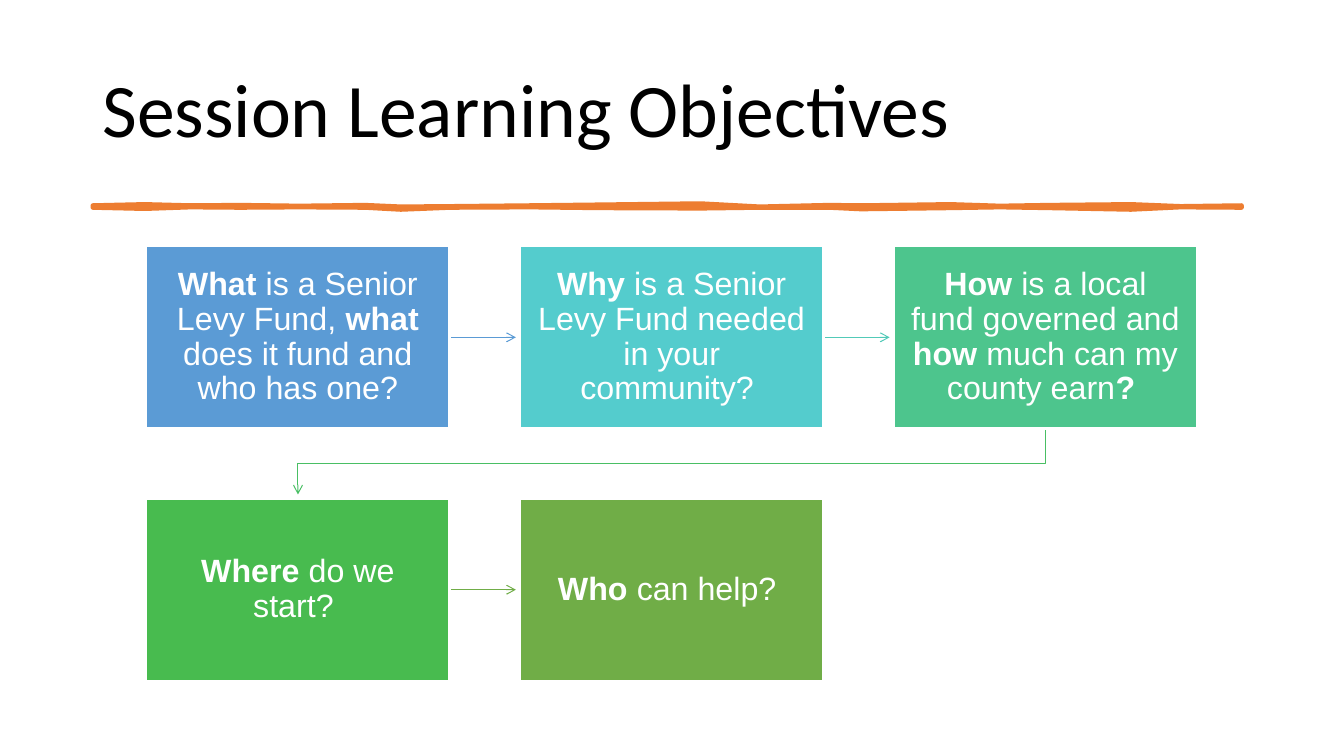
from lxml import etree
from pptx import Presentation
from pptx.dml.color import RGBColor
from pptx.enum.shapes import MSO_CONNECTOR, MSO_SHAPE
from pptx.enum.text import MSO_ANCHOR, PP_ALIGN
from pptx.oxml.ns import qn
from pptx.util import Cm, Pt

STRAIGHT = MSO_CONNECTOR.STRAIGHT
RECTANGLE = MSO_SHAPE.RECTANGLE
MIDDLE = MSO_ANCHOR.MIDDLE
CENTER = PP_ALIGN.CENTER
LEFT = PP_ALIGN.LEFT

BLACK = RGBColor(0x00, 0x00, 0x00)
WHITE = RGBColor(0xFF, 0xFF, 0xFF)
ORANGE = RGBColor(0xED, 0x7D, 0x31)

TITLE = "Session Learning Objectives"
# Runs alternate between bold and regular, starting with bold.
OBJECTIVES = [
    (RGBColor(0x5B, 0x9B, 0xD5),
     ["What ", "is a Senior Levy Fund, ", "what", " does it fund and who has one?"]),
    (RGBColor(0x54, 0xCC, 0xCD),
     ["Why ", "is a Senior Levy Fund needed in your community? "]),
    (RGBColor(0x4D, 0xC5, 0x8D),
     ["How ", "is a local fund governed and", " how ", "much can my county earn", "? "]),
    (RGBColor(0x48, 0xBB, 0x4F), ["Where ", "do we start? "]),
    (RGBColor(0x70, 0xAD, 0x47), ["Who ", "can help? "]),
]
ARROW_COLORS = [
    RGBColor(0x5B, 0x9B, 0xD5),
    RGBColor(0x52, 0xCA, 0xB8),
    RGBColor(0x49, 0xBF, 0x64),
    RGBColor(0x70, 0xAD, 0x47),
]
BRUSH_EDGES = [
    (2.34, 5.18, 5.23), (3.65, 5.15, 5.26), (4.8, 5.18, 5.22), (6.05, 5.17, 5.23),
    (7.55, 5.19, 5.22), (9.2, 5.17, 5.23), (10.1, 5.21, 5.28), (11.35, 5.2, 5.23),
    (13.35, 5.18, 5.22), (15.1, 5.16, 5.24), (17.65, 5.13, 5.25), (19.15, 5.21, 5.23),
    (20.9, 5.17, 5.23), (21.7, 5.18, 5.27), (23.95, 5.15, 5.24), (25.2, 5.19, 5.22),
    (26.45, 5.17, 5.24), (28.5, 5.15, 5.28), (29.75, 5.2, 5.22), (31.29, 5.18, 5.23),
]

COLUMNS = 3
GRID_LEFT, GRID_TOP = 3.68, 6.2
BOX_WIDTH, BOX_HEIGHT = 7.66, 4.6
COLUMN_STEP, ROW_STEP = 9.42, 6.36
ARROW_GAP = 0.1


def box_corner(index):
    row, column = divmod(index, COLUMNS)
    return GRID_LEFT + column * COLUMN_STEP, GRID_TOP + row * ROW_STEP


def add_freeform(slide, points, close):
    corners = [(Cm(x), Cm(y)) for x, y in points]
    builder = slide.shapes.build_freeform(*corners[0])
    builder.add_line_segments(corners[1:], close=close)
    shape = builder.convert_to_shape()
    shape.shadow.inherit = False
    return shape


def add_straight(slide, start, end):
    connector = slide.shapes.add_connector(STRAIGHT, *map(Cm, start + end))
    etree.SubElement(connector._element.spPr, qn("a:effectLst"))
    return connector


def add_arrow(slide, index):
    left, top = box_corner(index)
    next_left, next_top = box_corner(index + 1)
    if next_top == top:
        middle = top + BOX_HEIGHT / 2
        arrow = add_straight(slide, (left + BOX_WIDTH, middle), (next_left - ARROW_GAP, middle))
    else:
        start_x, end_x = left + BOX_WIDTH / 2, next_left + BOX_WIDTH / 2
        bottom = top + BOX_HEIGHT
        turn = (bottom + next_top) / 2
        arrow = add_freeform(slide, [(start_x, bottom), (start_x, turn), (end_x, turn),
                                     (end_x, next_top - ARROW_GAP)], False)
        arrow.fill.background()
    arrow.line.color.rgb = ARROW_COLORS[index]
    arrow.line.width = Pt(0.75)
    outline = arrow._element.spPr.find(qn("a:ln"))
    etree.SubElement(outline, qn("a:tailEnd"), type="arrow")


def format_text(text_frame, runs, alignment, font_name, size, color):
    text_frame.word_wrap = True
    text_frame.vertical_anchor = MIDDLE
    paragraph = text_frame.paragraphs[0]
    paragraph.alignment = alignment
    paragraph.line_spacing = 0.9
    for text, bold in runs:
        run = paragraph.add_run()
        run.text = text
        run.font.name = font_name
        run.font.size = Pt(size)
        run.font.bold = bold
        run.font.color.rgb = color


def add_objective(slide, index, color, parts):
    left, top = box_corner(index)
    box = slide.shapes.add_shape(RECTANGLE, Cm(left), Cm(top), Cm(BOX_WIDTH), Cm(BOX_HEIGHT))
    box.shadow.inherit = False
    box.fill.solid()
    box.fill.fore_color.rgb = color
    box.line.color.rgb = WHITE
    box.line.width = Pt(2)
    text_frame = box.text_frame
    text_frame.margin_left = text_frame.margin_right = Cm(0.38)
    text_frame.margin_top = text_frame.margin_bottom = Cm(0.41)
    runs = [(part, position % 2 == 0) for position, part in enumerate(parts)]
    format_text(text_frame, runs, CENTER, "Arial", 23, WHITE)


def main():
    presentation = Presentation()
    presentation.slide_width = Cm(33.87)
    presentation.slide_height = Cm(19.05)
    slide = presentation.slides.add_slide(presentation.slide_layouts[6])

    title = slide.shapes.add_textbox(Cm(2.33), Cm(1.01), Cm(29.21), Cm(3.68))
    format_text(title.text_frame, [(TITLE, False)], LEFT, "Calibri", 54, BLACK)

    upper = [(x, top) for x, top, bottom in BRUSH_EDGES]
    lower = [(x, bottom) for x, top, bottom in reversed(BRUSH_EDGES)]
    brush = add_freeform(slide, upper + lower, True)
    brush.fill.solid()
    brush.fill.fore_color.rgb = ORANGE
    brush.line.color.rgb = ORANGE
    brush.line.width = Pt(3.25)

    for index in range(len(ARROW_COLORS)):
        add_arrow(slide, index)
    for index, (color, parts) in enumerate(OBJECTIVES):
        add_objective(slide, index, color, parts)

    presentation.save("out.pptx")


if __name__ == "__main__":
    main()
